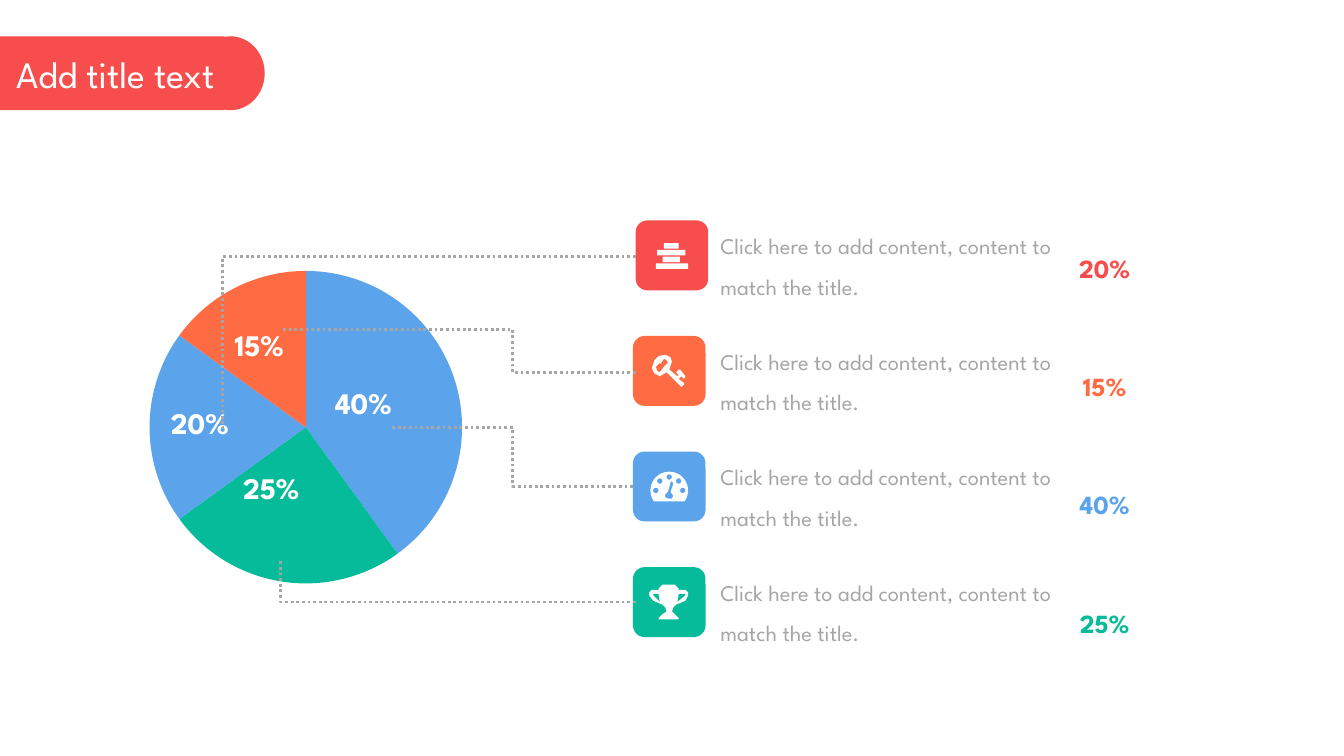
"""Build a pie chart slide with four linked legend rows."""
import math
from dataclasses import dataclass

import lxml.etree
import pptx
import pptx.chart.data
import pptx.dml.color
import pptx.enum.chart
import pptx.enum.dml
import pptx.enum.shapes
import pptx.enum.text
import pptx.oxml
import pptx.oxml.ns
import pptx.util

Inches = pptx.util.Inches
Shape = pptx.enum.shapes.MSO_SHAPE
Anchor = pptx.enum.text.MSO_ANCHOR
Align = pptx.enum.text.PP_ALIGN
Point = tuple[float, float]
Contour = list[Point]


@dataclass(frozen=True)
class Theme:
    font: str = "League Spartan"
    red: str = "F84D4D"
    orange: str = "FF6B42"
    blue: str = "5BA3EB"
    green: str = "06BB9A"
    grey: str = "A6A6A6"
    white: str = "FFFFFF"
    title: int = 20
    label: int = 16
    percent: int = 14
    body: int = 12
    line: float = 1.5


@dataclass(frozen=True)
class Row:
    percent: str
    color: str
    left: float
    icon: list[Contour]


@dataclass(frozen=True)
class Slice:
    value: float
    color: str
    shift: Point


@dataclass(frozen=True)
class Link:
    start: Point
    end: Point
    bend: int


THEME = Theme()
ROW_TOP, ROW_STEP = 1.64, 0.86
PERCENT_TOP, PERCENT_STEP = 1.87, 0.88
BODY = "Click here to add content, content to match the title."


def arc(x: float, y: float, radius: float, first: int = 0, last: int = 360) -> Contour:
    """Return points along an arc, clockwise in degrees."""
    angles = [math.radians(first + (last - first) * i / 24) for i in range(25)]
    return [(x + radius * math.cos(a), y + radius * math.sin(a)) for a in angles]


def bar(x: float, y: float, width: float) -> Contour:
    """Return a thin horizontal bar."""
    return [(x, y), (x + width, y), (x + width, y + 0.04), (x, y + 0.04)]


BARS = [bar(0.21, 0.17, 0.11), bar(0.16, 0.22, 0.21), bar(0.2, 0.27, 0.13), bar(0.15, 0.32, 0.24)]
KEY = [
    [(0.38, 0.32), (0.36, 0.3), (0.34, 0.32), (0.38, 0.35), (0.38, 0.36), (0.36, 0.38),
     (0.35, 0.37), (0.25, 0.27), (0.2, 0.3), (0.16, 0.28), (0.14, 0.24), (0.16, 0.18),
     (0.19, 0.15), (0.24, 0.14), (0.28, 0.16), (0.29, 0.19), (0.27, 0.25), (0.33, 0.3),
     (0.34, 0.29), (0.32, 0.27), (0.34, 0.25), (0.35, 0.25), (0.39, 0.3)],
    [(0.23, 0.17), (0.21, 0.2), (0.21, 0.21), (0.2, 0.2), (0.17, 0.23), (0.18, 0.26),
     (0.2, 0.27), (0.23, 0.23), (0.26, 0.2), (0.25, 0.18)],
]
GAUGE = [
    arc(0.27, 0.29, 0.14, 145, 395),
    *[arc(x, y, 0.02) for x, y in
      [(0.17, 0.29), (0.2, 0.22), (0.27, 0.19), (0.34, 0.22), (0.37, 0.29)]],
    [(0.3, 0.24), (0.29, 0.22), (0.28, 0.23), (0.26, 0.3), (0.24, 0.32), (0.24, 0.34),
     (0.26, 0.35), (0.29, 0.35), (0.3, 0.33), (0.28, 0.3)],
]
TROPHY = [
    [(0.41, 0.21), (0.39, 0.25), (0.32, 0.28), (0.3, 0.3), (0.29, 0.33), (0.31, 0.35),
     (0.34, 0.38), (0.34, 0.39), (0.19, 0.39), (0.19, 0.38), (0.22, 0.35), (0.25, 0.33),
     (0.24, 0.3), (0.22, 0.28), (0.15, 0.25), (0.12, 0.21), (0.12, 0.19), (0.14, 0.17),
     (0.19, 0.17), (0.19, 0.16), (0.22, 0.13), (0.31, 0.13), (0.34, 0.16), (0.34, 0.17),
     (0.39, 0.17), (0.41, 0.19)],
    [(0.19, 0.2), (0.15, 0.2), (0.15, 0.21), (0.2, 0.26)],
    [(0.39, 0.2), (0.34, 0.2), (0.33, 0.26), (0.39, 0.21)],
]
ROWS = [
    Row("20%", THEME.red, 4.73, BARS),
    Row("15%", THEME.orange, 4.71, KEY),
    Row("40%", THEME.blue, 4.71, GAUGE),
    Row("25%", THEME.green, 4.71, TROPHY),
]
SLICES = [
    Slice(0.4, THEME.blue, (-0.03, 0.01)),
    Slice(0.25, THEME.green, (-0.04, -0.03)),
    Slice(0.2, THEME.blue, (-0.05, 0)),
    Slice(0.15, THEME.orange, (-0.02, -0.02)),
]
LINKS = [
    Link((4.73, 1.91), (1.67, 3.18), 100400),
    Link((4.73, 4.48), (2.09, 4.16), 100000),
    Link((4.73, 2.77), (2.09, 2.45), 34700),
    Link((4.71, 3.62), (2.92, 3.18), 50000),
]


def rgb(color: str) -> pptx.dml.color.RGBColor:
    """Return a colour object for a hex string."""
    return pptx.dml.color.RGBColor.from_string(color)


def style_font(font, size: int, color: str, bold: bool = False) -> None:
    """Apply the theme font with a size and colour."""
    font.name, font.size, font.bold = THEME.font, pptx.util.Pt(size), bold
    font.color.rgb = rgb(color)


def paint(sp, color: str) -> None:
    """Give a shape a flat fill with no line or shadow."""
    sp.shadow.inherit = False
    sp.fill.solid()
    sp.fill.fore_color.rgb = rgb(color)
    sp.line.fill.background()


def add_block(s, kind, color: str, *box: float) -> None:
    """Draw a flat preset shape."""
    paint(s.shapes.add_shape(kind, *map(Inches, box)), color)


def write(sp, text: str, size: int, color: str, bold: bool = False, inset: Point = (0, 0)):
    """Write one run into a shape and return its paragraph."""
    tf = sp.text_frame
    tf.margin_left = tf.margin_right = Inches(inset[0])
    tf.margin_top = tf.margin_bottom = Inches(inset[1])
    p = tf.paragraphs[0]
    r = p.add_run()
    r.text = text
    style_font(r.font, size, color, bold)
    return p


def add_title(s) -> None:
    """Draw the rounded tab and place the title on it."""
    add_block(s, Shape.RECTANGLE, THEME.red, 0, 0.27, 1.67, 0.55)
    add_block(s, Shape.OVAL, THEME.red, 1.46, 0.27, 0.51, 0.55)
    sp = s.shapes.title
    sp.left, sp.top, sp.width, sp.height = map(Inches, (0.12, 0.38, 1.85, 0.34))
    write(sp, "Add title text", THEME.title, THEME.white).alignment = Align.LEFT
    sp.text_frame.vertical_anchor = Anchor.MIDDLE
    sp.element.getparent().append(sp.element)


def add_layout(parent, index: int, values: dict[str, object]) -> None:
    """Insert a manual chart layout into a chart element."""
    ns = pptx.oxml.ns.nsdecls("c")
    items = "".join(f'<c:{k} val="{v}"/>' for k, v in values.items())
    xml = f"<c:layout {ns}><c:manualLayout>{items}</c:manualLayout></c:layout>"
    for old in parent.findall(pptx.oxml.ns.qn("c:layout")):
        parent.remove(old)
    parent.insert(index, pptx.oxml.parse_xml(xml))


def add_pie(s) -> None:
    """Draw the pie with its value labels."""
    data = pptx.chart.data.CategoryChartData(number_format="0%")
    data.categories = [str(i + 1) for i in range(len(SLICES))]
    data.add_series("Series 1", [piece.value for piece in SLICES])
    box = map(Inches, (0.17, 1.68, 4.17, 3.06))
    chart = s.shapes.add_chart(pptx.enum.chart.XL_CHART_TYPE.PIE, *box, data).chart
    chart.has_legend = chart.has_title = False
    style_font(chart.font, THEME.label, THEME.white, True)
    plot = chart.plots[0]
    plot.vary_by_categories = True
    for i, piece in enumerate(SLICES):
        point = plot.series[0].points[i]
        point.format.fill.solid()
        point.format.fill.fore_color.rgb = rgb(piece.color)
        point.format.line.fill.background()
        label = point.data_label
        style_font(label.font, THEME.label, THEME.white, True)
        label.position = pptx.enum.chart.XL_LABEL_POSITION.CENTER
    for dlbl, piece in zip(chart.element.iter(pptx.oxml.ns.qn("c:dLbl")), SLICES):
        add_layout(dlbl, 1, dict(zip("xy", piece.shift)))
    area = next(chart.element.iter(pptx.oxml.ns.qn("c:plotArea")))
    add_layout(area, 0, {"layoutTarget": "inner", "xMode": "edge", "yMode": "edge",
                         "x": 0.22, "y": 0.11, "w": 0.57, "h": 0.76})


def add_icon(s, contours: list[Contour], left: float, top: float) -> None:
    """Draw a white icon whose inner contours are holes."""
    first, *rest = [[(Inches(left + x), Inches(top + y)) for x, y in c] for c in contours]
    builder = s.shapes.build_freeform(*first[0])
    builder.add_line_segments(first[1:], close=True)
    for contour in rest:
        builder.move_to(*contour[0])
        builder.add_line_segments(contour[1:], close=True)
    paint(builder.convert_to_shape(), THEME.white)


def add_row(s, i: int, row: Row) -> None:
    """Draw one legend row: tile, icon, text and percentage."""
    top = ROW_TOP + i * ROW_STEP
    sp = s.shapes.add_textbox(*map(Inches, (5.29, top - 0.05, 2.71, 0.64)))
    sp.text_frame.word_wrap = True
    write(sp, BODY, THEME.body, THEME.grey, inset=(0.07, 0.04)).line_spacing = 1.5
    sp = s.shapes.add_textbox(*map(Inches, (8.02, PERCENT_TOP + i * PERCENT_STEP, 0.4, 0.24)))
    sp.text_frame.word_wrap = False
    sp.text_frame.vertical_anchor = Anchor.BOTTOM
    write(sp, row.percent, THEME.percent, row.color, True).alignment = Align.CENTER
    add_block(s, Shape.ROUNDED_RECTANGLE, row.color, row.left, top, 0.54, 0.52)
    add_icon(s, row.icon, row.left, top)


def add_link(s, link: Link) -> None:
    """Draw a dotted elbow line from a tile to its slice."""
    kind = pptx.enum.shapes.MSO_CONNECTOR.ELBOW
    sp = s.shapes.add_connector(kind, *map(Inches, link.start + link.end))
    sp.line.color.rgb = rgb(THEME.grey)
    sp.line.width = pptx.util.Pt(THEME.line)
    sp.line.dash_style = pptx.enum.dml.MSO_LINE.ROUND_DOT
    qn, props = pptx.oxml.ns.qn, sp.element.spPr
    lxml.etree.SubElement(props, qn("a:effectLst"))
    guide = lxml.etree.SubElement(props.find(".//" + qn("a:avLst")), qn("a:gd"))
    guide.set("name", "adj1")
    guide.set("fmla", f"val {link.bend}")


def main() -> None:
    """Build and save the slide."""
    prs = pptx.Presentation()
    prs.slide_width = Inches(10)
    prs.slide_height = prs.slide_width * 9 // 16
    s = prs.slides.add_slide(prs.slide_layouts[5])
    add_title(s)
    add_pie(s)
    for i, row in enumerate(ROWS):
        add_row(s, i, row)
    for link in LINKS:
        add_link(s, link)
    prs.save("out.pptx")


if __name__ == "__main__":
    main()
